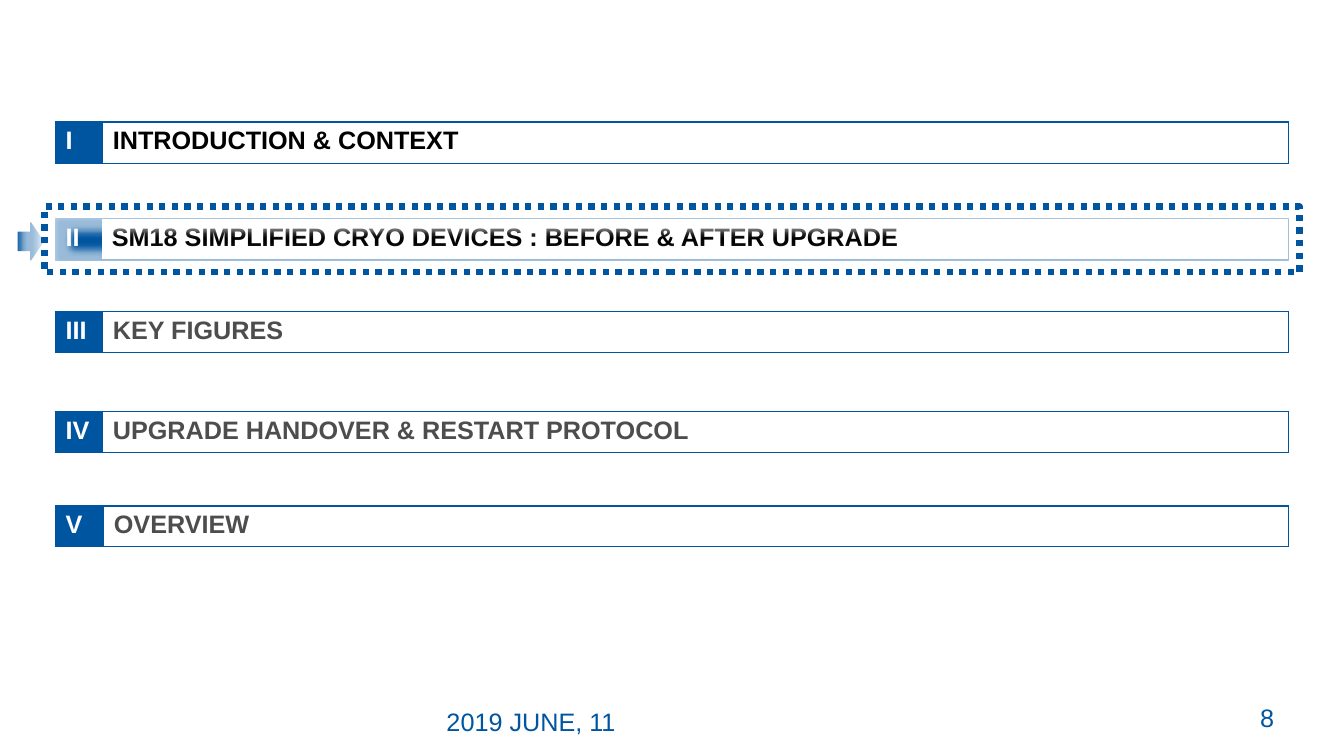
from dataclasses import dataclass

from lxml import etree
from pptx import Presentation
from pptx import util as u
from pptx.dml.color import RGBColor
from pptx.enum import dml, shapes
from pptx.oxml import ns

EMU_PER_PX = 9144  # 100 px to the inch
COLORS = {"blue": "0055A0", "white": "FFFFFF", "black": "000000", "grey": "4D4D4D"}
BAR_LEFT, BAR_WIDTH = 55, 1223


@dataclass(frozen=True)
class Section:
    numeral: str
    title: str
    top: int
    title_color: str = "grey"
    height: int = 41
    numeral_width: int = 47


SECTIONS = [
    Section("I", "INTRODUCTION & CONTEXT", 121, "black"),
    Section("II", "SM18 SIMPLIFIED CRYO DEVICES : BEFORE & AFTER UPGRADE", 217, "black",
            numeral_width=46),
    Section("III", "KEY FIGURES", 309),
    Section("IV", "UPGRADE HANDOVER & RESTART PROTOCOL", 408),
    Section("V", "OVERVIEW", 502, height=40, numeral_width=48),
]


def px(*lengths: int) -> list[u.Emu]:
    return [u.Emu(length * EMU_PER_PX) for length in lengths]


def rgb(name: str) -> RGBColor:
    return RGBColor.from_string(COLORS[name])


def add_element(parent, tag: str, **attributes: str):
    return etree.SubElement(parent, ns.qn(tag), attributes)


def write(frame, content: str, *, color: str, bold: bool = False, size: int = 18) -> None:
    paragraph = frame.paragraphs[0]
    run = paragraph.add_run()
    run.text = content
    run.font.name = "Arial"
    run.font.size = u.Pt(size)
    run.font.bold = bold
    run.font.color.rgb = rgb(color)


def set_borders(cell, color: str) -> None:
    properties = cell._tc.get_or_add_tcPr()
    for index, side in enumerate("LRTB"):
        line = add_element(properties, f"a:ln{side}", w=str(u.Pt(1)))
        fill = add_element(line, "a:solidFill")
        add_element(fill, "a:srgbClr", val=COLORS[color])
        properties.insert(index, line)


def add_section(slide, section: Section) -> None:
    table = slide.shapes.add_table(
        1, 2, *px(BAR_LEFT, section.top, BAR_WIDTH, section.height)).table
    table.first_row = table.horz_banding = False
    widths = px(section.numeral_width, BAR_WIDTH - section.numeral_width)
    for column, width in zip(table.columns, widths):
        column.width = width

    numeral, title = table.cell(0, 0), table.cell(0, 1)
    numeral.fill.solid()
    numeral.fill.fore_color.rgb = rgb("blue")
    title.fill.background()
    write(numeral.text_frame, section.numeral, color="white", bold=True)
    write(title.text_frame, section.title, color=section.title_color, bold=True)
    for cell in (numeral, title):
        set_borders(cell, "blue")


def add_outlined(slide, kind, box: tuple[int, int, int, int], line_width: float):
    shape = slide.shapes.add_shape(kind, *px(*box))
    shape.shadow.inherit = False
    shape.line.color.rgb = rgb("blue")
    shape.line.width = u.Pt(line_width)
    return shape


def add_marker(slide) -> None:
    arrow = add_outlined(slide, shapes.MSO_SHAPE.DOWN_ARROW, (12, 227, 37, 25), 0.75)
    arrow.rotation = 270
    arrow.fill.solid()
    arrow.fill.fore_color.rgb = rgb("blue")

    frame = add_outlined(slide, shapes.MSO_SHAPE.RECTANGLE, (44, 205, 1245, 65), 4.5)
    frame.fill.background()
    frame.line.dash_style = dml.MSO_LINE.ROUND_DOT
    # White glow that softens whatever lies under the dotted frame
    effects = frame._element.spPr.find(ns.qn("a:effectLst"))
    glow = add_element(effects, "a:glow", rad=str(u.Pt(10)))
    color = add_element(glow, "a:srgbClr", val=COLORS["white"])
    add_element(color, "a:alpha", val="60000")


def add_label(slide, content: str, box: tuple[int, int, int, int]) -> None:
    frame = slide.shapes.add_textbox(*px(*box)).text_frame
    frame.word_wrap = True
    write(frame, content, color="blue")


def main() -> None:
    presentation = Presentation()
    presentation.slide_width, presentation.slide_height = px(1333, 750)
    slide = presentation.slides.add_slide(presentation.slide_layouts[6])

    # Agenda
    for section in SECTIONS:
        add_section(slide, section)

    # Current section
    add_marker(slide)

    # Footer
    add_label(slide, "2019 JUNE, 11", (433, 696, 311, 40))
    add_label(slide, "8", (1240, 692, 43, 40))

    presentation.save("out.pptx")


if __name__ == "__main__":
    main()
